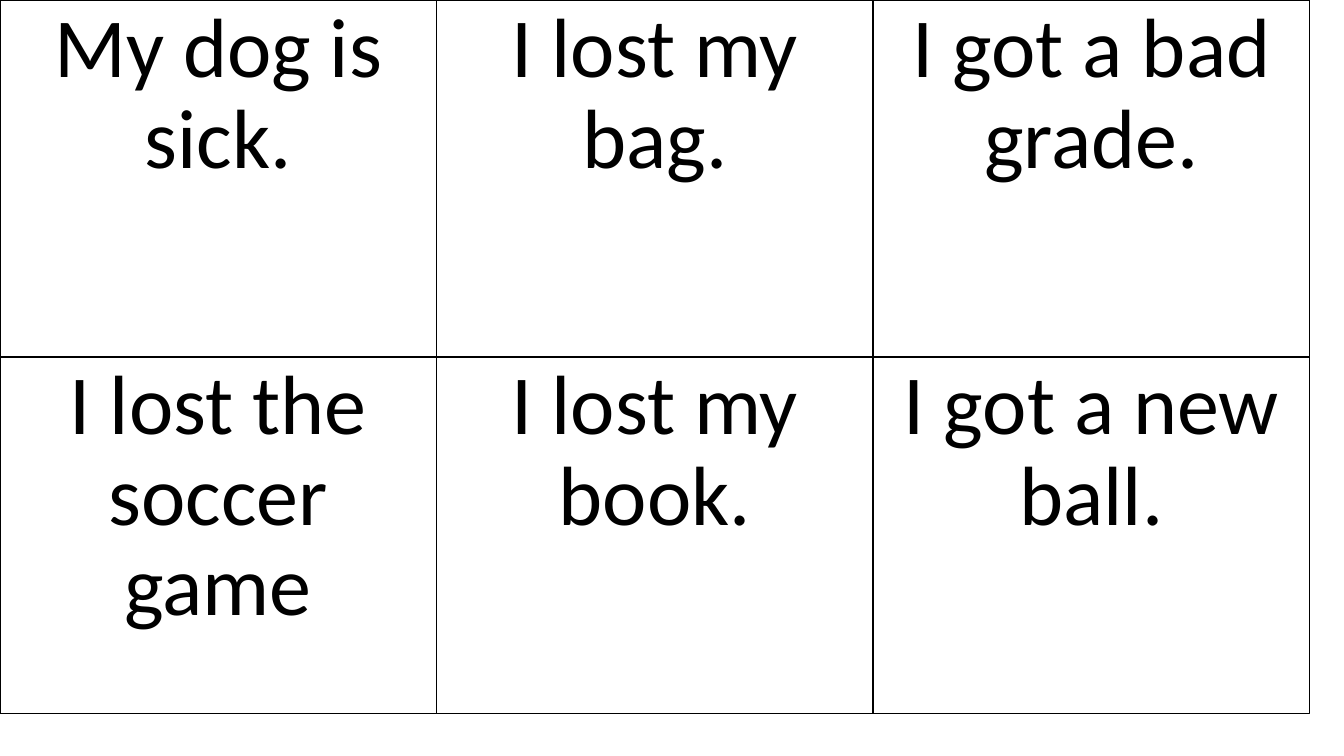
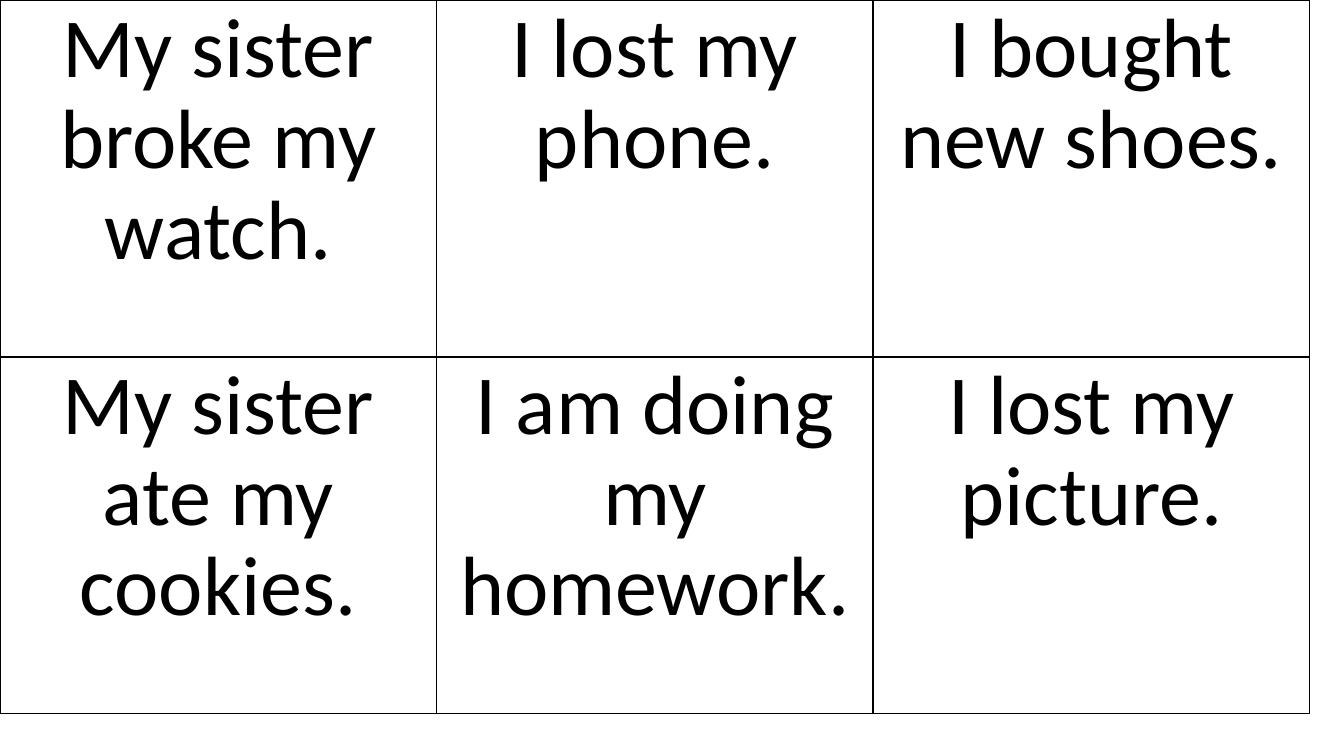
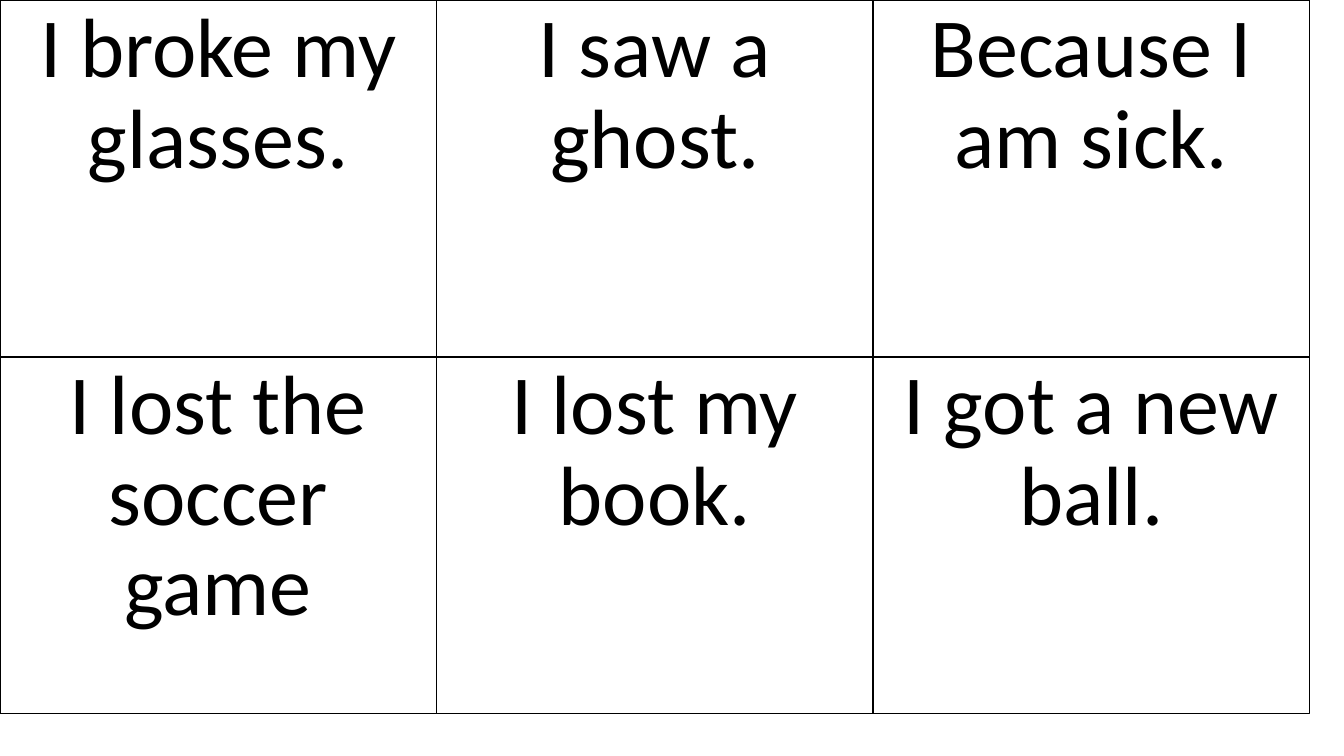
from pptx import Presentation
from pptx.dml.color import RGBColor
from pptx.enum.shapes import MSO_SHAPE as Shape
from pptx.enum.text import MSO_ANCHOR as Anchor, MSO_AUTO_SIZE as AutoSize, PP_ALIGN as Align
from pptx.util import Inches, Pt

TITLE_ONLY = 5
CARD_W, CARD_H = 4.33, 3.54
ROWS = 2

DECK = [
    ["My dog is sick.", "I lost the soccer game",
     "I lost my bag.", "I lost my book.",
     "I got a bad grade.", "I got a new ball."],
    ["My sister broke my watch.", "My sister ate my cookies.",
     "I lost my phone.", "I am doing my homework.",
     "I bought new shoes.", "I lost my picture."],
    ["I broke my glasses.", "I lost the soccer game",
     "I saw a ghost.", "I lost my book.",
     "Because I am sick.", "I got a new ball."],
]


def rgb(value):
    return RGBColor.from_string(value)


def apply(target, values):
    for name, value in values.items():
        setattr(target, name, value)


class CardDeck:
    paper, ink = "FFFFFF", "000000"
    frame = dict(word_wrap=True, auto_size=AutoSize.NONE, vertical_anchor=Anchor.TOP,
                 margin_left=Inches(0.1), margin_right=Inches(0.1),
                 margin_top=Inches(0.05), margin_bottom=Inches(0.05))
    paragraph = dict(alignment=Align.CENTER, line_spacing=0.9,
                     space_before=Pt(0), space_after=Pt(0))
    font = dict(name="Calibri", size=Pt(60), bold=False)

    def __init__(self):
        self.prs = Presentation()
        apply(self.prs, dict(slide_width=Inches(13.33), slide_height=Inches(7.5)))

    def box(self, col, row):
        return dict(left=Inches(col * CARD_W), top=Inches(row * CARD_H),
                    width=Inches(CARD_W), height=Inches(CARD_H))

    def slide(self, texts):
        self.s = self.prs.slides.add_slide(self.prs.slide_layouts[TITLE_ONLY])
        for i, text in enumerate(texts):
            col, row = divmod(i, ROWS)
            if i == 0:
                self.title(text, col, row)
            else:
                self.card(text, col, row)

    def title(self, text, col, row):
        sp = self.s.shapes.title
        apply(sp, self.box(col, row))
        self.format(sp, text)

    def card(self, text, col, row):
        sp = self.s.shapes.add_shape(Shape.RECTANGLE, **self.box(col, row))
        sp.shadow.inherit = False
        self.format(sp, text)

    def format(self, sp, text):
        sp.fill.solid()
        sp.fill.fore_color.rgb = rgb(self.paper)
        sp.line.color.rgb = rgb(self.ink)
        sp.line.width = Pt(1)
        tf = sp.text_frame
        apply(tf, self.frame)
        p = tf.paragraphs[0]
        apply(p, self.paragraph)
        r = p.add_run()
        r.text = text
        apply(r.font, self.font)
        r.font.color.rgb = rgb(self.ink)


def main():
    deck = CardDeck()
    for texts in DECK:
        deck.slide(texts)
    deck.prs.save("out.pptx")


if __name__ == "__main__":
    main()
